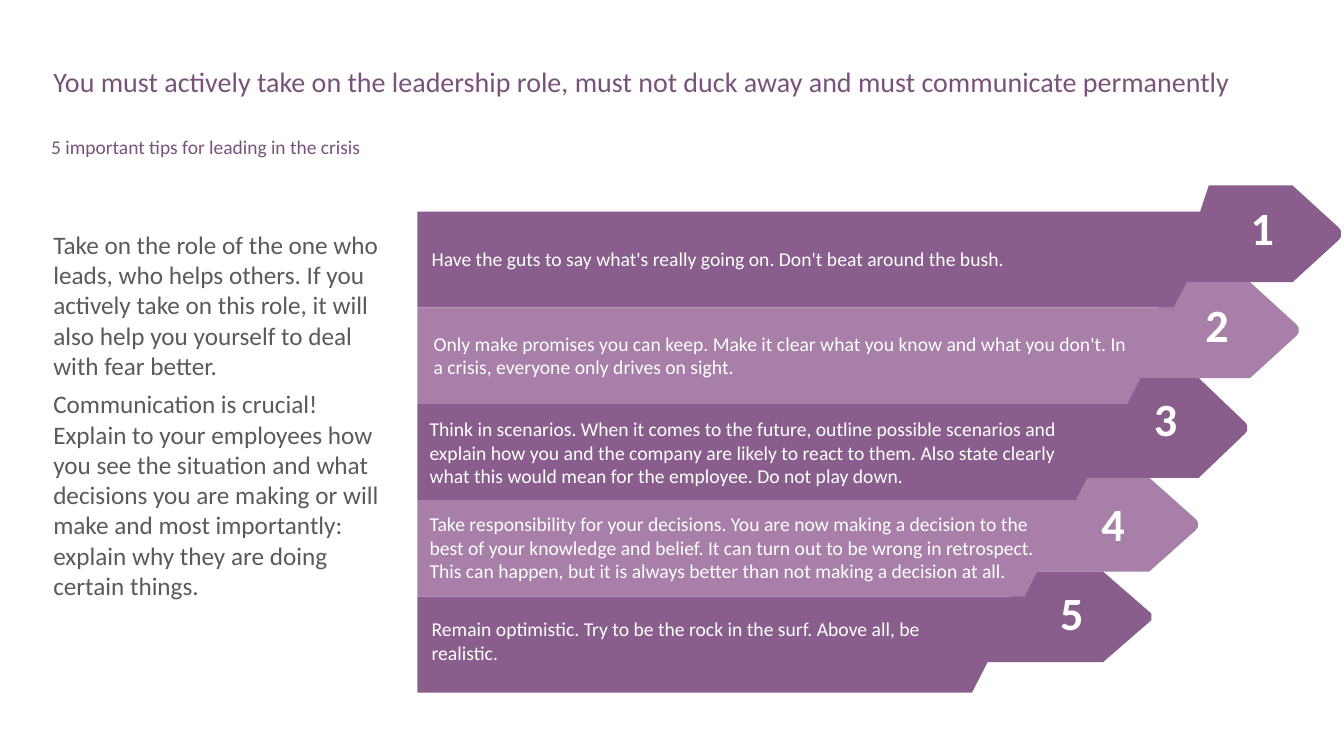
"""Slide with five leadership tips on stepped arrow bars."""
from pptx import Presentation, util as u
from pptx.dml.color import RGBColor
from pptx.enum import text as t

PLUM, DARK, LIGHT = "79527B", "895E8C", "A77FA9"
GREY, WHITE = "595A59", "FFFFFF"
LEFT, SLANT = 414, 49

TABS = [(1167, 184), (1125, 280), (1074, 375), (1025, 474), (979, 567)]
TAB_END = 657
NUMS = [(1226, 190), (1181, 286), (1130, 379), (1078, 483), (1037, 572)]
ENDS = [1213, 1167, 1116, 1065, 1013]
TIPS = [
    ((419, 241, 711, 33),
     "Have the guts to say what's really going on. Don't beat around the bush."),
    ((421, 325, 708, 56),
     "Only make promises you can keep. Make it clear what you know and what you "
     "don't. In a crisis, everyone only drives on sight."),
    ((417, 410, 647, 80),
     "Think in scenarios. When it comes to the future, outline possible scenarios "
     "and explain how you and the company are likely to react to them. Also state "
     "clearly what this would mean for the employee. Do not play down."),
    ((417, 504, 645, 80),
     "Take responsibility for your decisions. You are now making a decision to the "
     "best of your knowledge and belief. It can turn out to be wrong in retrospect."
     "\vThis can happen, but it is always better than not making a decision at all."),
    ((419, 608, 549, 56),
     "Remain optimistic. Try to be the rock in the surf. Above all, be realistic."),
]
ROLE = [
    "Take on the role of the one who leads, who helps others. If you actively take "
    "on this role, it will also help you yourself to deal with fear better.",
    "Communication is crucial! Explain to your employees how you see the situation "
    "and what decisions you are making or will make and most importantly: explain "
    "why they are doing certain things.",
]


def px(n):
    return u.Emu(n * 9144)


def rgb(code):
    return RGBColor.from_string(code)


class Deck:
    def __init__(self):
        self.prs = Presentation()
        self.prs.slide_width, self.prs.slide_height = px(1333), px(750)
        self.slide = self.prs.slides.add_slide(self.prs.slide_layouts[5])
        self.font = "Calibri"

    def fill_text(self, box, lines, size, color, bold=False, mid=False,
                  align=t.PP_ALIGN.LEFT, pad=(10, 5), lead=None, gap=0):
        frame = box.text_frame
        frame.word_wrap = True
        frame.auto_size = t.MSO_AUTO_SIZE.NONE
        frame.vertical_anchor = t.MSO_ANCHOR.MIDDLE if mid else t.MSO_ANCHOR.TOP
        frame.margin_left = frame.margin_right = px(pad[0])
        frame.margin_top = frame.margin_bottom = px(pad[1])
        for i, line in enumerate(lines):
            para = frame.add_paragraph() if i else frame.paragraphs[0]
            para.text = line
            para.alignment = align
            para.space_before = u.Pt(gap if i else 0)
            if lead:
                para.line_spacing = lead
            font = para.font
            font.name, font.size, font.bold = self.font, u.Pt(size), bold
            font.color.rgb = rgb(color)

    def title(self, area, line, size, color, **style):
        box = self.slide.shapes.title
        box.left, box.top, box.width, box.height = map(px, area)
        self.fill_text(box, [line], size, color, **style)

    def text(self, area, lines, size, color, **style):
        box = self.slide.shapes.add_textbox(*map(px, area))
        self.fill_text(box, lines, size, color, **style)

    def shape(self, points, fill):
        pen = self.slide.shapes.build_freeform(*points[0], scale=9144)
        pen.add_line_segments(points[1:])
        form = pen.convert_to_shape()
        form.shadow.inherit = False
        form.fill.solid()
        form.fill.fore_color.rgb = rgb(fill)
        form.line.fill.background()

    def tab(self, x, top, end, fill):
        outline = [(0, 1), (32, 0), (115, 0), (161, .44), (163, .47),
                   (163, .53), (161, .56), (115, 1)]
        high = end - top
        self.shape([(x + dx, top + round(part * high)) for dx, part in outline], fill)

    def bar(self, top, end, right, fill):
        self.shape([(LEFT, top), (right, top), (right - SLANT, end), (LEFT, end)], fill)


def main():
    deck = Deck()
    deck.title((43, 63, 1254, 64),
               "You must actively take on the leadership role, must not duck away "
               "and must communicate permanently", 20, PLUM, lead=.9)
    deck.text((41, 135, 1256, 28), ["5 important tips for leading in the crisis"],
              13.9, PLUM, lead=.7)
    deck.text((43, 179, 349, 465), ROLE, 18, GREY, mid=True, gap=6)

    fills = [DARK, LIGHT, DARK, LIGHT, DARK]
    stops = [top for _, top in TABS[1:]] + [TAB_END]
    tops = [210 + 191 * i // 2 for i in range(6)]
    for (x, top), stop, fill in zip(TABS, stops, fills):
        deck.tab(x, top, stop, fill)
    for top, end, right, fill in zip(tops, tops[1:], ENDS, fills):
        deck.bar(top, end, right, fill)
    for i, (spot, (area, tip)) in enumerate(zip(NUMS, TIPS), 1):
        deck.text((*spot, 52, 71), [str(i)], 33, WHITE, bold=True, mid=True,
                  align=t.PP_ALIGN.CENTER)
        deck.text(area, [tip], 14, WHITE, pad=(9, 4))
    deck.prs.save("out.pptx")


if __name__ == "__main__":
    main()
